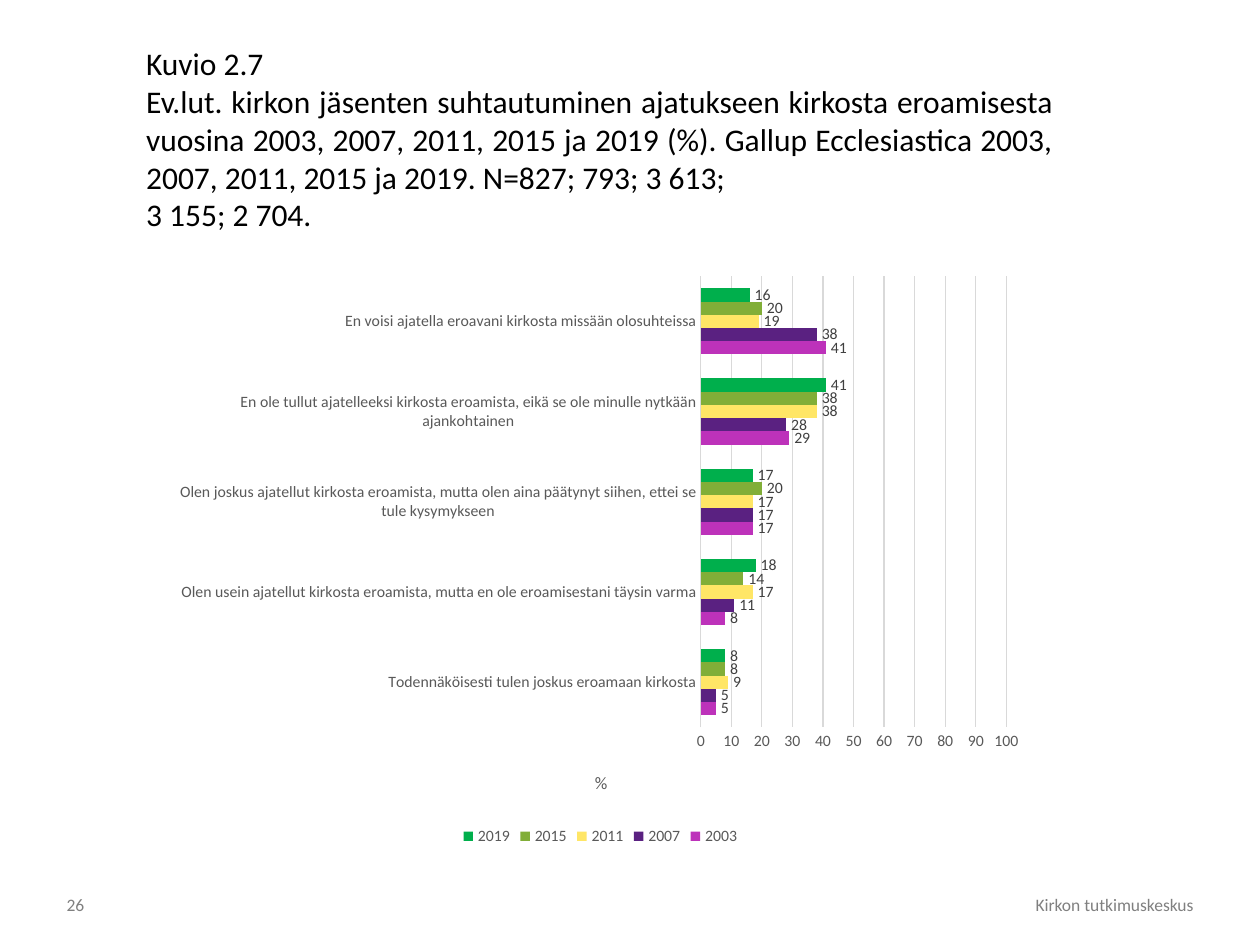
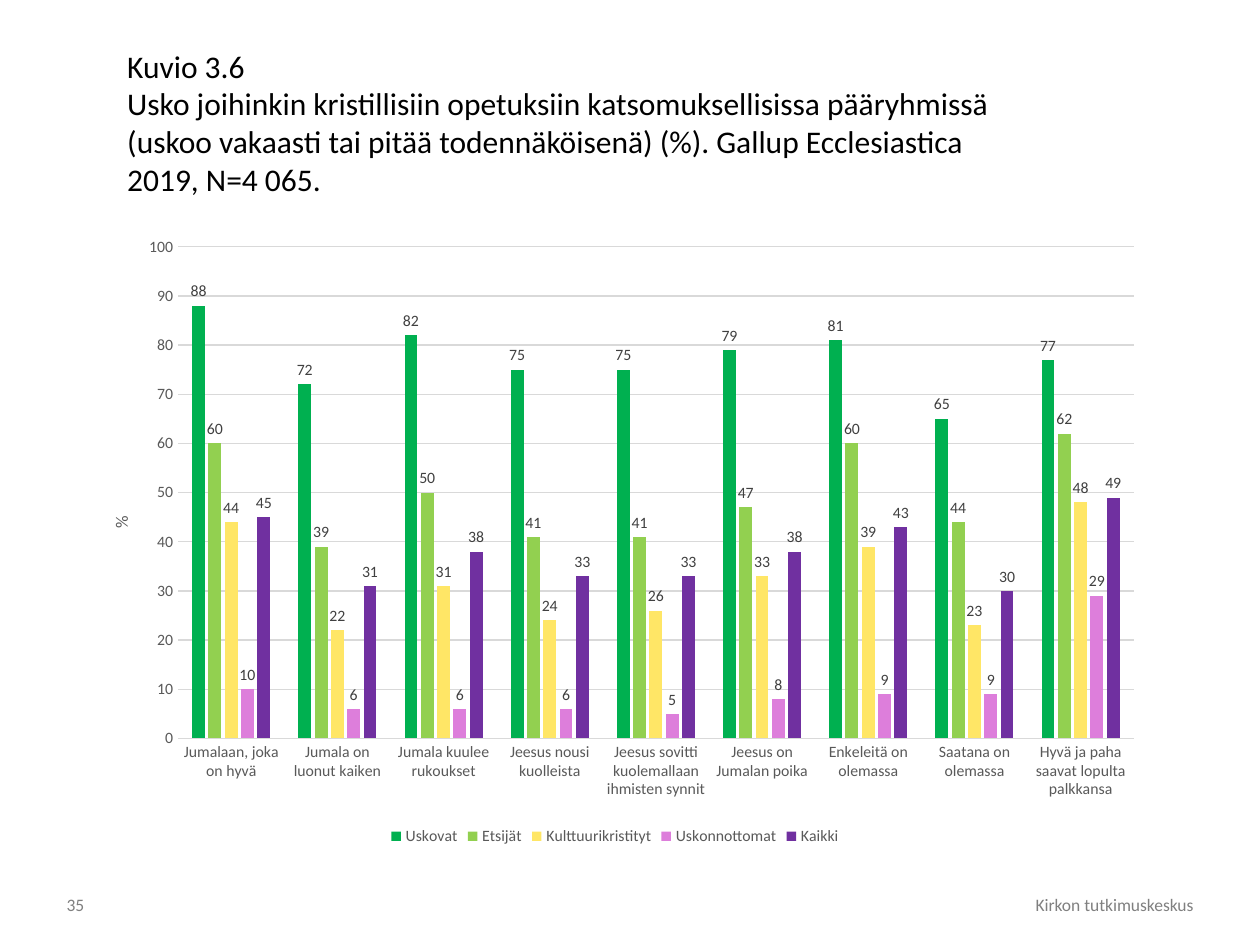
from dataclasses import dataclass

from pptx import Presentation
from pptx.chart.data import CategoryChartData
from pptx.dml.color import RGBColor
from pptx.enum.chart import XL_CHART_TYPE as CT
from pptx.enum.chart import XL_LABEL_POSITION as LP
from pptx.enum.chart import XL_LEGEND_POSITION as LEG
from pptx.enum.chart import XL_TICK_MARK as TICK
from pptx.enum.text import MSO_ANCHOR as ANCHOR
from pptx.enum.text import MSO_AUTO_SIZE as FIT
from pptx.enum.text import PP_ALIGN as AL
from pptx.oxml import parse_xml
from pptx.oxml.ns import nsdecls, qn
from pptx.util import Inches, Pt

WIDTH, HEIGHT = Inches(10), Inches(7.5)
COLUMNS, ROWS = 100, 75
FONT = "Calibri"
COLORS = {
    "title": "000000",
    "footer": "808080",
    "axis": "595959",
    "label": "404040",
    "grid": "D9D9D9",
    "orchid": "BD32BA",
    "plum": "5A2181",
    "yellow": "FFE666",
    "olive": "81AE38",
    "green": "00AF4C",
    "bright green": "00B050",
    "lime": "92D050",
    "pink": "DD7EDB",
    "purple": "7030A0",
}


@dataclass
class Box:
    col: float
    row: float
    cols: float
    rows: float

    def emu(self) -> tuple[int, int, int, int]:
        return (int(WIDTH * self.col / COLUMNS), int(HEIGHT * self.row / ROWS),
                int(WIDTH * self.cols / COLUMNS), int(HEIGHT * self.rows / ROWS))


@dataclass
class Series:
    name: str
    color: str
    values: tuple[int, ...]


@dataclass
class Figure:
    page: str
    title_box: Box
    title: list[str]
    body_align: AL
    chart_box: Box
    kind: CT
    gap: int
    overlap: int
    plot_share: tuple[float, float, float, float]
    unit_share: tuple[float, float]
    unit_turn: int
    categories: list[str]
    series: list[Series]


PAGE_BOX = Box(4.3, 70.6, 4.7, 2.4)
OWNER_BOX = Box(29.5, 70.6, 66.2, 2.4)
OWNER = "Kirkon tutkimuskeskus"

FIGURES = [
    Figure(
        page="26",
        title_box=Box(10.6, 3, 74, 16.2),
        title=[
            "Kuvio 2.7",
            "Ev.lut. kirkon jäsenten suhtautuminen ajatukseen kirkosta eroamisesta "
            "vuosina 2003, 2007, 2011, 2015 ja 2019 (%). Gallup Ecclesiastica 2003, "
            "2007, 2011, 2015 ja 2019. N=827; 793; 3 613;",
            "3 155; 2 704.",
        ],
        body_align=AL.JUSTIFY,
        chart_box=Box(13, 21, 69.3, 46.5),
        kind=CT.BAR_CLUSTERED,
        gap=182,
        overlap=0,
        plot_share=(0.615, 0.02, 0.35, 0.77),
        unit_share=(0.49, 0.86),
        unit_turn=0,
        categories=[
            "Todennäköisesti tulen joskus eroamaan kirkosta",
            "Olen usein ajatellut kirkosta eroamista, mutta en ole eroamisestani "
            "täysin varma",
            "Olen joskus ajatellut kirkosta eroamista, mutta olen aina päätynyt "
            "siihen, ettei se tule kysymykseen",
            "En ole tullut ajatelleeksi kirkosta eroamista, eikä se ole minulle "
            "nytkään ajankohtainen",
            "En voisi ajatella eroavani kirkosta missään olosuhteissa",
        ],
        series=[
            Series("2003", "orchid", (5, 8, 17, 29, 41)),
            Series("2007", "plum", (5, 11, 17, 28, 38)),
            Series("2011", "yellow", (9, 17, 17, 38, 19)),
            Series("2015", "olive", (8, 14, 20, 38, 20)),
            Series("2019", "green", (8, 18, 17, 41, 16)),
        ],
    ),
    Figure(
        page="35",
        title_box=Box(9.1, 3.2, 70.8, 13.1),
        title=[
            "Kuvio 3.6",
            "Usko joihinkin kristillisiin opetuksiin katsomuksellisissa pääryhmissä "
            "(uskoo vakaasti tai pitää todennäköisenä) (%). Gallup Ecclesiastica "
            "2019, N=4 065.",
        ],
        body_align=AL.LEFT,
        chart_box=Box(5.9, 17.9, 85.8, 49.6),
        kind=CT.COLUMN_CLUSTERED,
        gap=219,
        overlap=-27,
        plot_share=(0.096, 0.034, 0.884, 0.787),
        unit_share=(0.03, 0.46),
        unit_turn=-5400000,
        categories=[
            "Jumalaan, joka on hyvä",
            "Jumala on luonut kaiken",
            "Jumala kuulee rukoukset",
            "Jeesus nousi kuolleista",
            "Jeesus sovitti kuolemallaan ihmisten synnit",
            "Jeesus on Jumalan poika",
            "Enkeleitä on olemassa",
            "Saatana on olemassa",
            "Hyvä ja paha saavat lopulta palkkansa",
        ],
        series=[
            Series("Uskovat", "bright green", (88, 72, 82, 75, 75, 79, 81, 65, 77)),
            Series("Etsijät", "lime", (60, 39, 50, 41, 41, 47, 60, 44, 62)),
            Series("Kulttuurikristityt", "yellow", (44, 22, 31, 24, 26, 33, 39, 23, 48)),
            Series("Uskonnottomat", "pink", (10, 6, 6, 6, 5, 8, 9, 9, 29)),
            Series("Kaikki", "purple", (45, 31, 38, 33, 33, 38, 43, 30, 49)),
        ],
    ),
]


def rgb(name: str) -> RGBColor:
    return RGBColor.from_string(COLORS[name])


def style(font, size: float, color: str) -> None:
    font.name = FONT
    font.size = Pt(size)
    font.bold = False
    font.color.rgb = rgb(color)


def add_run(p, text: str, size: float, color: str, align: AL) -> None:
    p.alignment = align
    r = p.add_run()
    r.text = text
    style(r.font, size, color)


def add_title(s, fig: Figure) -> None:
    sp = s.shapes.title
    sp.left, sp.top, sp.width, sp.height = fig.title_box.emu()
    tf = sp.text_frame
    tf.word_wrap = True
    tf.auto_size = FIT.SHAPE_TO_FIT_TEXT
    tf.vertical_anchor = ANCHOR.TOP
    for i, text in enumerate(fig.title):
        p = tf.add_paragraph() if i else tf.paragraphs[0]
        add_run(p, text, 18, "title", fig.body_align if i else AL.LEFT)


def add_footer(s, box: Box, text: str, align: AL) -> None:
    tf = s.shapes.add_textbox(*box.emu()).text_frame
    tf.word_wrap = True
    tf.vertical_anchor = ANCHOR.MIDDLE
    add_run(tf.paragraphs[0], text, 10, "footer", align)


def set_layout(parent, index: int, shares: tuple[float, ...], inner: bool) -> None:
    for old in parent.findall(qn("c:layout")):
        parent.remove(old)
    target = '<c:layoutTarget val="inner"/>' if inner else ""
    modes = '<c:xMode val="edge"/><c:yMode val="edge"/>'
    sizes = "".join(f'<c:{tag} val="{v}"/>' for tag, v in zip("xywh", shares))
    parent.insert(index, parse_xml(
        f'<c:layout {nsdecls("c")}><c:manualLayout>{target}{modes}{sizes}'
        "</c:manualLayout></c:layout>"))


def format_axes(chart, fig: Figure) -> None:
    cat, val = chart.category_axis, chart.value_axis
    for axis in (cat, val):
        axis.major_tick_mark = axis.minor_tick_mark = TICK.NONE
        style(axis.tick_labels.font, 9, "axis")
    cat.has_major_gridlines = False
    val.has_major_gridlines = True
    for line in (cat.format.line, val.major_gridlines.format.line):
        line.color.rgb = rgb("grid")
        line.width = Pt(0.75)
    val.format.line.fill.background()
    val.minimum_scale, val.maximum_scale, val.major_unit = 0, 100, 10
    val.has_title = True
    tf = val.axis_title.text_frame
    add_run(tf.paragraphs[0], "%", 10, "axis", AL.CENTER)
    title = val.axis_title._element
    body = title.find(".//" + qn("a:bodyPr"))
    body.set("rot", str(fig.unit_turn))
    body.set("vert", "horz")
    set_layout(title, 1, fig.unit_share, False)


def add_figure_chart(s, fig: Figure) -> None:
    data = CategoryChartData(number_format="0")
    data.categories = fig.categories
    for item in fig.series:
        data.add_series(item.name, item.values)
    chart = s.shapes.add_chart(fig.kind, *fig.chart_box.emu(), data).chart
    style(chart.font, 10, "title")
    chart.has_title = False
    chart.has_legend = True
    chart.legend.position = LEG.BOTTOM
    chart.legend.include_in_layout = False
    style(chart.legend.font, 9, "axis")
    plot = chart.plots[0]
    plot.vary_by_categories = False
    plot.gap_width, plot.overlap = fig.gap, fig.overlap
    for item, ser in zip(fig.series, plot.series):
        ser.format.fill.solid()
        ser.format.fill.fore_color.rgb = rgb(item.color)
        ser.invert_if_negative = False
        labels = ser.data_labels
        labels.show_value = True
        labels.position = LP.OUTSIDE_END
        style(labels.font, 9, "label")
    format_axes(chart, fig)
    set_layout(chart._chartSpace.find(".//" + qn("c:plotArea")), 0, fig.plot_share, True)


def main() -> None:
    prs = Presentation()
    prs.slide_width, prs.slide_height = WIDTH, HEIGHT
    for fig in FIGURES:
        s = prs.slides.add_slide(prs.slide_layouts[5])
        add_footer(s, OWNER_BOX, OWNER, AL.RIGHT)
        add_footer(s, PAGE_BOX, fig.page, AL.LEFT)
        add_title(s, fig)
        add_figure_chart(s, fig)
    prs.save("out.pptx")


if __name__ == "__main__":
    main()
